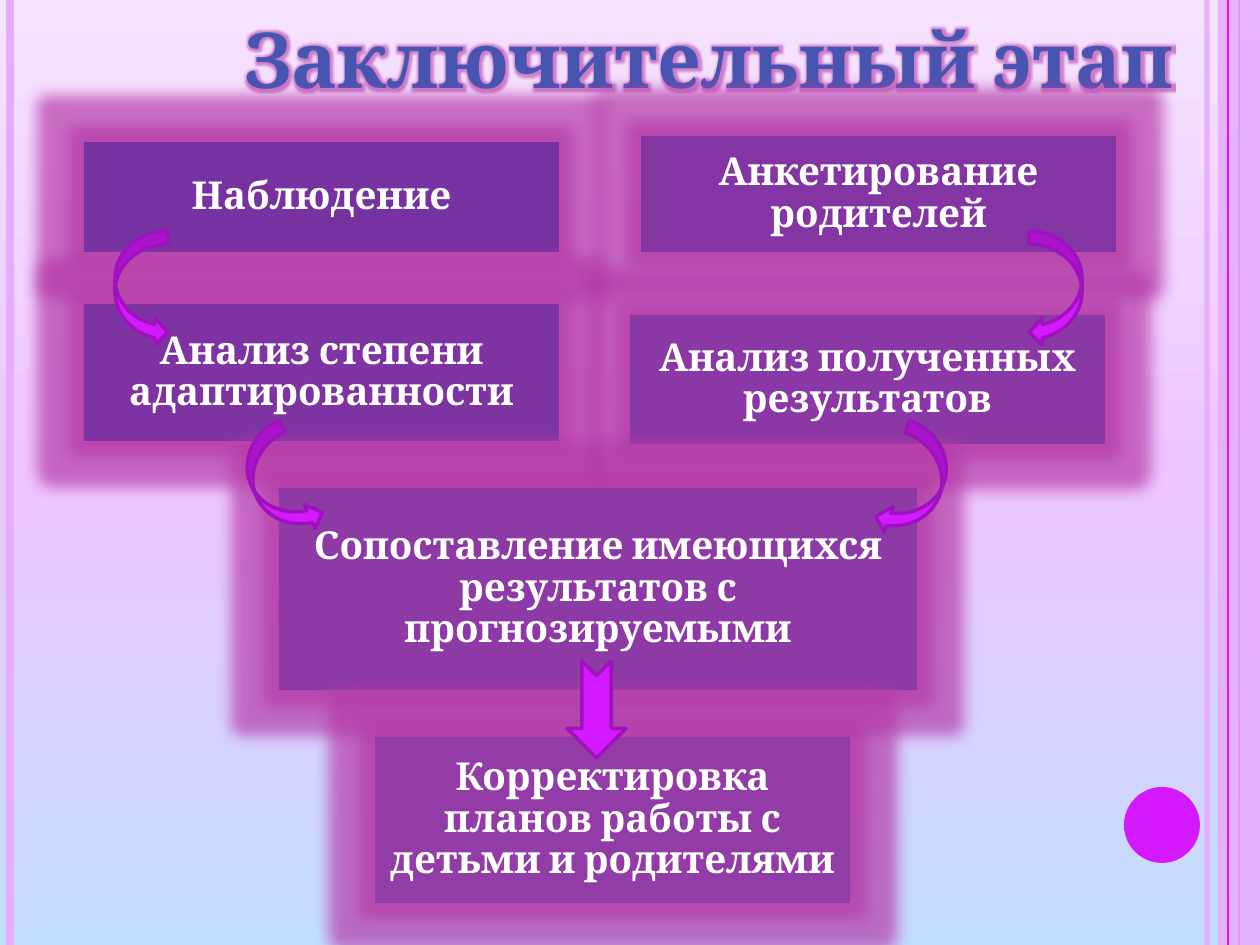
import pptx
import pptx.util
import pptx.dml.color
import pptx.enum.shapes
import pptx.enum.text
import pptx.oxml
import pptx.oxml.ns

PX = 914400 / 126
SHAPE = pptx.enum.shapes.MSO_SHAPE
ANCHOR = pptx.enum.text.MSO_ANCHOR
ALIGN = pptx.enum.text.PP_ALIGN
NS = pptx.oxml.ns.nsdecls("a")


def px(*lengths):
    return [pptx.util.Emu(round(length * PX)) for length in lengths]


def paint(color_format, value):
    color_format.rgb = pptx.dml.color.RGBColor.from_string(value)


deck = pptx.Presentation()
deck.slide_width, deck.slide_height = px(1260, 945)
page = deck.slides.add_slide(deck.slide_layouts[6])

# Background: blue at the bottom, pale lilac at the top
background = page.background.fill
background.gradient()
background.gradient_angle = 90
stops = page.element.xpath(".//a:gsLst")[0]
for stop in list(stops):
    stops.remove(stop)
for position, color in [(0, "C3DDFF"), (50, "EEC6FF"), (100, "F6E3FF")]:
    stops.append(pptx.oxml.parse_xml(
        f'<a:gs {NS} pos="{position * 1000}"><a:srgbClr val="{color}"/></a:gs>'))

# Side band, vertical rules and dot
decorations = [
    ("line", 1207, "E7ACFF", 3, 93),
    ("line", 10, "E7ACFF", 4.5, 100),
    ("line", 1239, "D519FF", 1.5, 100),
    ("band", 1218, "E7ACFF", 0, 87),
    ("line", 1228, "D519FF", 0.75, 100),
]
for kind, left, color, width, opacity in decorations:
    if kind == "line":
        mark = page.shapes.add_connector(
            pptx.enum.shapes.MSO_CONNECTOR.STRAIGHT, *px(left, 0, left, 945))
        paint(mark.line.color, color)
        mark.line.width = pptx.util.Pt(width)
        mark.element.spPr.append(pptx.oxml.parse_xml(f"<a:effectLst {NS}/>"))
    else:
        mark = page.shapes.add_shape(SHAPE.RECTANGLE, *px(left, 0, 42, 945))
        mark.shadow.inherit = False
        mark.fill.solid()
        paint(mark.fill.fore_color, color)
        mark.line.fill.background()
    if opacity < 100:
        mark.element.spPr.xpath(".//a:srgbClr")[0].append(
            pptx.oxml.parse_xml(f'<a:alpha {NS} val="{opacity * 1000}"/>'))

dot = page.shapes.add_shape(SHAPE.OVAL, *px(1124, 787, 76, 76))
dot.shadow.inherit = False
dot.fill.solid()
paint(dot.fill.fore_color, "D519FF")
dot.line.fill.background()

# Title with a soft glow
title = page.shapes.add_textbox(*px(116, 0, 1071, 110))
title.text_frame.word_wrap = True
title.text_frame.vertical_anchor = ANCHOR.BOTTOM
para = title.text_frame.paragraphs[0]
para.alignment = ALIGN.RIGHT
span = para.add_run()
span.text = "Заключительный этап"
span.font.name = "Cambria"
span.font.size = pptx.util.Pt(44)
span.font.bold = True
paint(span.font.color, "4855B0")
span.font.fill._xPr.find(pptx.oxml.ns.qn("a:solidFill")).addnext(pptx.oxml.parse_xml(
    f'<a:effectLst {NS}><a:glow rad="63500"><a:srgbClr val="B53CA8">'
    '<a:alpha val="60000"/></a:srgbClr></a:glow></a:effectLst>'))

# Step boxes, each more transparent than the one before
steps = [
    ("Наблюдение", 84, 142, 475, 110),
    ("Анализ степени адаптированности", 84, 304, 475, 137),
    ("Анкетирование родителей", 641, 136, 475, 116),
    ("Анализ полученных результатов", 630, 315, 475, 129),
    ("Сопоставление имеющихся результатов с прогнозируемыми", 279, 488, 638, 202),
    ("Корректировка планов работы с детьми и родителями", 375, 737, 475, 166),
]
for index, (text, *place) in enumerate(steps):
    box = page.shapes.add_shape(SHAPE.RECTANGLE, *px(*place))
    box.shadow.inherit = False
    box.fill.solid()
    paint(box.fill.fore_color, "7030A0")
    box.line.fill.background()
    box.element.spPr.xpath("./a:solidFill/a:srgbClr")[0].append(
        pptx.oxml.parse_xml(f'<a:alpha {NS} val="{(90 - 8 * index) * 1000}"/>'))
    box.element.spPr.xpath("./a:effectLst")[0].append(pptx.oxml.parse_xml(
        f'<a:glow {NS} rad="228600"><a:srgbClr val="B53CA8">'
        '<a:alpha val="70000"/></a:srgbClr></a:glow>'))
    frame = box.text_frame
    frame.word_wrap = True
    frame.vertical_anchor = ANCHOR.MIDDLE
    frame.margin_left, frame.margin_top, frame.margin_right, frame.margin_bottom = px(11, 11, 11, 11)
    para = frame.paragraphs[0]
    para.text = text
    para.alignment = ALIGN.CENTER
    para.line_spacing = 0.9
    para.font.name = "Cambria"
    para.font.size = pptx.util.Pt(22)
    para.font.bold = True
    paint(para.font.color, "FFFFFF")

# Arrows between the steps
curved, notched = SHAPE.CURVED_DOWN_ARROW, SHAPE.NOTCHED_RIGHT_ARROW
arrows = [
    (curved, 998, 262, 115, 53, 90, None),
    (curved, 858, 457, 115, 53, 109.6, None),
    (curved, 222, 457, 115, 53, 244.8, "flipH"),
    (curved, 84, 262, 115, 53, 90, "flipV"),
    (notched, 548, 680, 97, 59, 90, None),
]
for kind, left, top, width, height, angle, flip in arrows:
    arrow = page.shapes.add_shape(kind, *px(left, top, width, height))
    arrow.shadow.inherit = False
    arrow.rotation = angle
    if flip:
        arrow.element.spPr.xfrm.set(flip, "1")
    arrow.fill.solid()
    paint(arrow.fill.fore_color, "D519FF")
    paint(arrow.line.color, "9E12BD")
    arrow.line.width = pptx.util.Pt(2)

deck.save("out.pptx")
